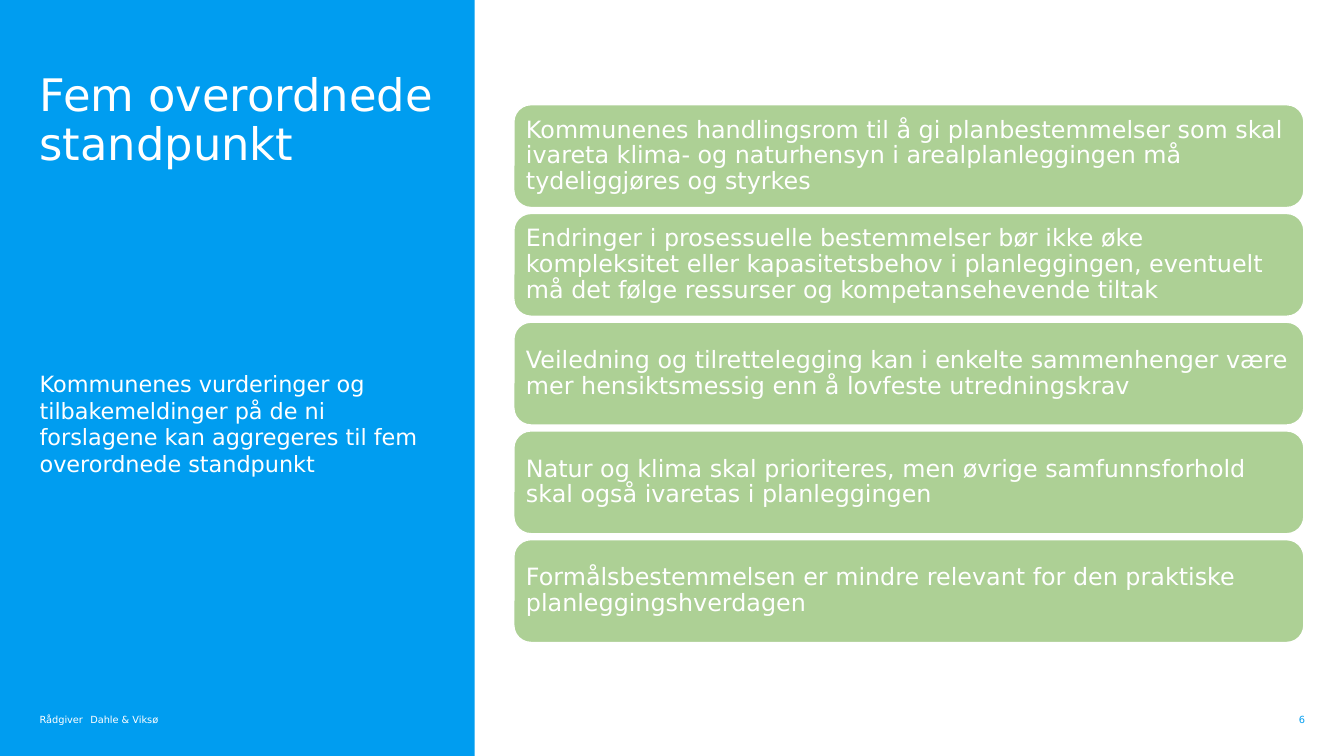
import dataclasses
from typing import Any

import pptx
import pptx.dml.color
import pptx.enum.shapes
import pptx.enum.text
import pptx.util

Cm = pptx.util.Cm
Pt = pptx.util.Pt
Align = pptx.enum.text.PP_ALIGN
Anchor = pptx.enum.text.MSO_ANCHOR
Shape = pptx.enum.shapes.MSO_SHAPE


@dataclasses.dataclass(frozen=True)
class Theme:
    font: str = "DejaVu Sans"
    blue: str = "009DF0"
    green: str = "ADD095"
    white: str = "FFFFFF"
    title_size: float = 32
    card_size: float = 17
    body_size: float = 16
    footer_size: float = 7


@dataclasses.dataclass(frozen=True)
class Area:
    left: float
    top: float
    width: float
    height: float

    def lengths(self) -> tuple[Any, ...]:
        return tuple(Cm(value) for value in dataclasses.astuple(self))


@dataclasses.dataclass(frozen=True)
class Label:
    text: str
    area: Area
    size: float
    color: str
    align: Any = Align.LEFT
    anchor: Any = Anchor.BOTTOM


THEME = Theme()
PANEL = Area(0, 0, 11.96, 19.05)
TITLE = Area(1, 1.83, 9.96, 3.28)
FIRST_CARD = Area(12.95, 2.64, 19.91, 2.59)
CARD_PITCH = 2.74
CARD_INSET = 0.18

STANDPOINTS = [
    "Kommunenes handlingsrom til å gi planbestemmelser som skal ivareta klima- og "
    "naturhensyn i arealplanleggingen må tydeliggjøres og styrkes",
    "Endringer i prosessuelle bestemmelser bør ikke øke kompleksitet eller kapasitetsbehov "
    "i planleggingen, eventuelt må det følge ressurser og kompetansehevende tiltak",
    "Veiledning og tilrettelegging kan i enkelte sammenhenger være mer hensiktsmessig "
    "enn å lovfeste utredningskrav",
    "Natur og klima skal prioriteres, men øvrige samfunnsforhold skal også ivaretas "
    "i planleggingen",
    "Formålsbestemmelsen er mindre relevant for den praktiske planleggingshverdagen",
]

LABELS = [
    Label("Kommunenes vurderinger og tilbakemeldinger på de ni forslagene kan aggregeres "
          "til fem overordnede standpunkt",
          Area(1, 9.32, 9.96, 7.7), THEME.body_size, THEME.white, anchor=Anchor.TOP),
    Label("Rådgiver", Area(1, 17.68, 2.16, 0.61), THEME.footer_size, THEME.white),
    Label("Dahle & Viksø", Area(1.88, 17.81, 2.11, 0.48), THEME.footer_size, THEME.white,
          align=Align.RIGHT),
    Label("6", Area(31.14, 17.98, 1.75, 0.3), THEME.footer_size, THEME.blue,
          align=Align.RIGHT),
]


def rgb(color: str) -> pptx.dml.color.RGBColor:
    return pptx.dml.color.RGBColor.from_string(color)


def write(box: Any, text: str, *, size: float, color: str = THEME.white,
          align: Any = Align.LEFT, anchor: Any = Anchor.TOP,
          inset: float = 0, line_spacing: float = 1) -> None:
    frame = box.text_frame
    frame.word_wrap = True
    frame.auto_size = pptx.enum.text.MSO_AUTO_SIZE.NONE
    frame.vertical_anchor = anchor
    frame.margin_left = frame.margin_right = Cm(inset)
    frame.margin_top = frame.margin_bottom = Cm(inset)
    para = frame.paragraphs[0]
    para.alignment = align
    para.line_spacing = line_spacing
    para.space_before = para.space_after = Pt(0)
    span = para.add_run()
    span.text = text
    span.font.name = THEME.font
    span.font.size = Pt(size)
    span.font.color.rgb = rgb(color)


def add_block(page: Any, kind: Any, area: Area, fill: str) -> Any:
    block = page.shapes.add_shape(kind, *area.lengths())
    block.shadow.inherit = False
    block.fill.solid()
    block.fill.fore_color.rgb = rgb(fill)
    block.line.fill.background()
    return block


def add_title(page: Any, text: str) -> None:
    title = page.shapes.title
    title.left, title.top, title.width, title.height = TITLE.lengths()
    write(title, text, size=THEME.title_size, line_spacing=0.91)


def add_label(page: Any, label: Label) -> None:
    box = page.shapes.add_textbox(*label.area.lengths())
    write(box, label.text, size=label.size, color=label.color,
          align=label.align, anchor=label.anchor)


def add_card(page: Any, index: int, text: str) -> None:
    area = dataclasses.replace(FIRST_CARD, top=FIRST_CARD.top + index * CARD_PITCH)
    card = add_block(page, Shape.ROUNDED_RECTANGLE, area, THEME.green)
    card.line.color.rgb = rgb(THEME.white)
    card.line.width = Pt(1)
    write(card, text, size=THEME.card_size, anchor=Anchor.MIDDLE,
          inset=CARD_INSET, line_spacing=0.9)


def main() -> None:
    deck = pptx.Presentation()
    deck.slide_width, deck.slide_height = Cm(33.87), Cm(19.05)
    page = deck.slides.add_slide(deck.slide_layouts.get_by_name("Title Only"))

    panel = add_block(page, Shape.RECTANGLE, PANEL, THEME.blue)
    page.shapes.title.element.addprevious(panel.element)  # keep the panel behind the title
    add_title(page, "Fem overordnede standpunkt")
    for label in LABELS:
        add_label(page, label)
    for index, text in enumerate(STANDPOINTS):
        add_card(page, index, text)

    deck.save("out.pptx")


if __name__ == "__main__":
    main()
